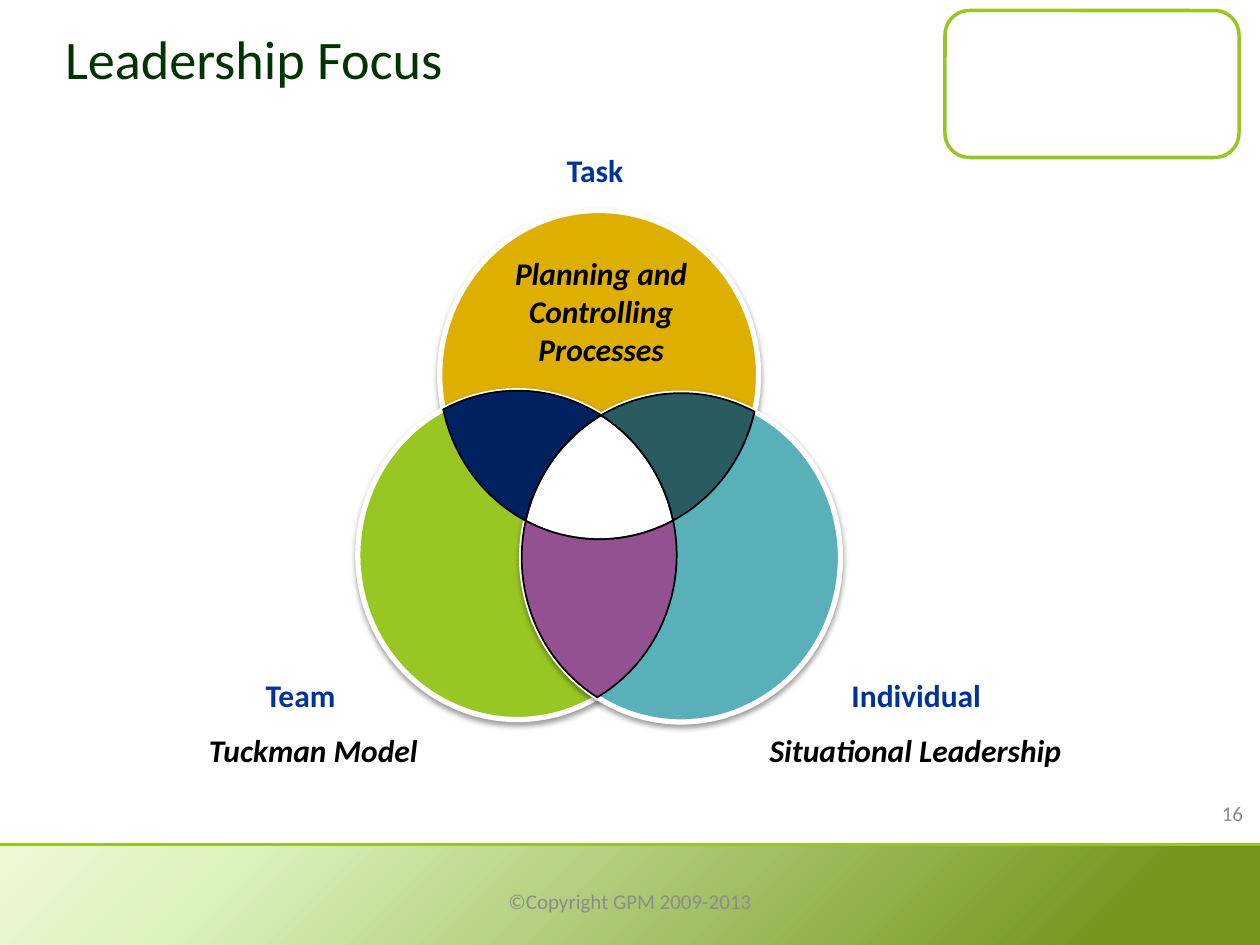
from math import atan2, cos, hypot, pi, sin

from lxml import etree
from pptx import Presentation
from pptx import util as u
from pptx.dml.color import RGBColor
from pptx.enum import shapes, text
from pptx.oxml.ns import qn

RADIUS_X, RADIUS_Y = 91.1, 93.95
TASK, TEAM, INDIVIDUAL = (342.4, 214.2), (295.6, 317.2), (389.2, 318.6)
GREEN, GREY, BLUE, BLACK, WHITE = "98C723", "8C8C8C", "003399", "000000", "FFFFFF"
LEFT, CENTER, RIGHT = text.PP_ALIGN.LEFT, text.PP_ALIGN.CENTER, text.PP_ALIGN.RIGHT


def colour(value):
    """Turn a hex string into a colour."""
    return RGBColor.from_string(value)


def points(values):
    """Turn several numbers into lengths in points."""
    return [u.Pt(value) for value in values]


def set_outline(line, value, width):
    """Colour a line and set its width."""
    line.color.rgb = colour(value)
    line.width = u.Pt(width)


def add_panel(page, kind, place, fill, line=None, width=1):
    """Add a preset shape with a plain fill and no shadow."""
    panel = page.shapes.add_shape(kind, *points(place))
    panel.shadow.inherit = False
    panel.fill.solid()
    panel.fill.fore_color.rgb = colour(fill)
    if line:
        set_outline(panel.line, line, width)
    else:
        panel.line.fill.background()
    return panel


def add_gradient(panel, stops, angle):
    """Give a shape a linear gradient with any number of stops."""
    panel.fill.gradient()
    panel.fill.gradient_angle = 360 - angle
    stop_list = next(panel.element.iter(qn("a:gsLst")))
    for stop in list(stop_list):
        stop_list.remove(stop)
    for position, value in stops:
        stop = etree.SubElement(stop_list, qn("a:gs"), pos=str(position * 1000))
        etree.SubElement(stop, qn("a:srgbClr"), val=value)


def add_circle(page, centre, fill):
    """Add one ring of the diagram with a soft shadow below it."""
    x, y = centre
    place = (x - RADIUS_X, y - RADIUS_Y, 2 * RADIUS_X, 2 * RADIUS_Y)
    circle = add_panel(page, shapes.MSO_SHAPE.OVAL, place, fill, WHITE, 3)
    effects = circle.element.spPr.find(qn("a:effectLst"))
    shadow = etree.SubElement(effects, qn("a:outerShdw"), blurRad="40000",
                              dist="20000", dir="5400000", rotWithShape="0")
    shade = etree.SubElement(shadow, qn("a:srgbClr"), val=BLACK)
    etree.SubElement(shade, qn("a:alpha"), val="38000")


def crossings(first, second):
    """Return the two points where two circles cross."""
    x, y = (first[0] + second[0]) / 2, (first[1] + second[1]) / 2
    dx = (second[0] - first[0]) / RADIUS_X
    dy = (second[1] - first[1]) / RADIUS_Y
    distance = hypot(dx, dy)
    reach = (1 - distance ** 2 / 4) ** 0.5 / distance
    across, down = -dy * reach * RADIUS_X, dx * reach * RADIUS_Y
    return (x + across, y + down), (x - across, y - down)


def arc(centre, start, end, steps=24):
    """Return points along the shorter arc between two points of a circle."""
    first, last = (atan2((y - centre[1]) / RADIUS_Y, (x - centre[0]) / RADIUS_X)
                   for x, y in (start, end))
    sweep = (last - first + pi) % (2 * pi) - pi
    angles = [first + sweep * step / steps for step in range(steps + 1)]
    return [(centre[0] + RADIUS_X * cos(angle), centre[1] + RADIUS_Y * sin(angle))
            for angle in angles]


def add_overlap(page, centres, corners, fill):
    """Add an overlap whose sides are arcs between successive corners."""
    ends = corners[1:] + corners[:1]
    outline = [points(point) for side in zip(centres, corners, ends)
               for point in arc(*side)]
    builder = page.shapes.build_freeform(*outline[0])
    builder.add_line_segments(outline[1:], close=True)
    overlap = builder.convert_to_shape()
    overlap.shadow.inherit = False
    overlap.fill.solid()
    overlap.fill.fore_color.rgb = colour(fill)
    set_outline(overlap.line, BLACK, 1)


def format_text(frame, size, value, align=LEFT, bold=False, italic=False):
    """Format every run in a text frame."""
    for paragraph in frame.paragraphs:
        paragraph.alignment = align
        for span in paragraph.runs:
            span.font.name = "Calibri"
            span.font.size = u.Pt(size)
            span.font.color.rgb = colour(value)
            span.font.bold, span.font.italic = bold, italic


def add_text(page, words, place, size, value, align=LEFT, wrap=False,
             anchor=text.MSO_ANCHOR.TOP, bold=False, italic=False):
    """Add a formatted text box."""
    frame = page.shapes.add_textbox(*points(place)).text_frame
    frame.word_wrap = wrap
    frame.vertical_anchor = anchor
    frame.text = words
    format_text(frame, size, value, align, bold, italic)


def add_title(page, words):
    """Place and format the slide title."""
    title = page.shapes.title
    title.left, title.top, title.width, title.height = points((30, 0, 504, 66))
    title.text_frame.text = words
    title.text_frame.vertical_anchor = text.MSO_ANCHOR.MIDDLE
    format_text(title.text_frame, 31, "003300")


def add_frame(page):
    """Add the corner box, the footer band and its rule."""
    add_panel(page, shapes.MSO_SHAPE.ROUNDED_RECTANGLE, (540, 6, 168, 84),
              WHITE, GREEN, 2)
    band = add_panel(page, shapes.MSO_SHAPE.RECTANGLE, (0, 483, 720, 59), WHITE)
    add_gradient(band, [(0, "EEF8D5"), (19, "DAF2BC"), (89, "72951A")], 45)
    rule = page.shapes.add_connector(shapes.MSO_CONNECTOR.STRAIGHT,
                                     *points((0, 482.4, 720, 482.4)))
    set_outline(rule.line, GREEN, 1.5)
    etree.SubElement(rule.element.spPr, qn("a:effectLst"))


def add_diagram(page):
    """Add the three circles and their overlaps."""
    for centre, fill in ((TASK, "DEAE00"), (TEAM, GREEN), (INDIVIDUAL, "59B0B9")):
        add_circle(page, centre, fill)
    inner_right, outer_left = sorted(crossings(TASK, TEAM), reverse=True)
    inner_left, outer_right = sorted(crossings(TASK, INDIVIDUAL))
    top, bottom = sorted(crossings(TEAM, INDIVIDUAL), key=lambda point: point[1])
    add_overlap(page, (TEAM, TASK, INDIVIDUAL), [top, inner_right, inner_left], WHITE)
    add_overlap(page, (TEAM, INDIVIDUAL, TASK), [outer_left, top, inner_left], "002060")
    add_overlap(page, (INDIVIDUAL, TASK, TEAM), [top, outer_right, inner_right], "295B60")
    add_overlap(page, (TASK, TEAM, INDIVIDUAL), [inner_left, inner_right, bottom], "945191")


def main():
    """Build the slide and save the deck."""
    deck = Presentation()
    deck.slide_width, deck.slide_height = points((720, 540))
    page = deck.slides.add_slide(deck.slide_layouts[5])
    add_frame(page)
    add_title(page, "Leadership Focus")
    add_diagram(page)
    for words, left, top, width in (("Task", 316.8, 82.8, 46.8),
                                    ("Individual", 479.5, 383, 89.3),
                                    ("Team", 144.7, 383, 54.7)):
        add_text(page, words, (left, top, width, 29), 18, BLUE, bold=True)
    add_text(page, "Planning and\nControlling Processes", (261.4, 141.8, 164.2, 72.7),
             18, BLACK, CENTER, wrap=True, bold=True, italic=True)
    for words, left, width in (("Situational Leadership", 432.7, 182.9),
                               ("Tuckman Model", 112.3, 135.4)):
        add_text(page, words, (left, 414, width, 29), 18, BLACK,
                 bold=True, italic=True)
    for words, place, align in (
            ("©Copyright GPM 2009-2013", (246, 500.4, 228, 28.8), CENTER),
            ("16", (549.4, 450, 168, 28.8), RIGHT)):
        add_text(page, words, place, 12, GREY, align, wrap=True,
                 anchor=text.MSO_ANCHOR.MIDDLE)
    deck.save("out.pptx")


if __name__ == "__main__":
    main()
